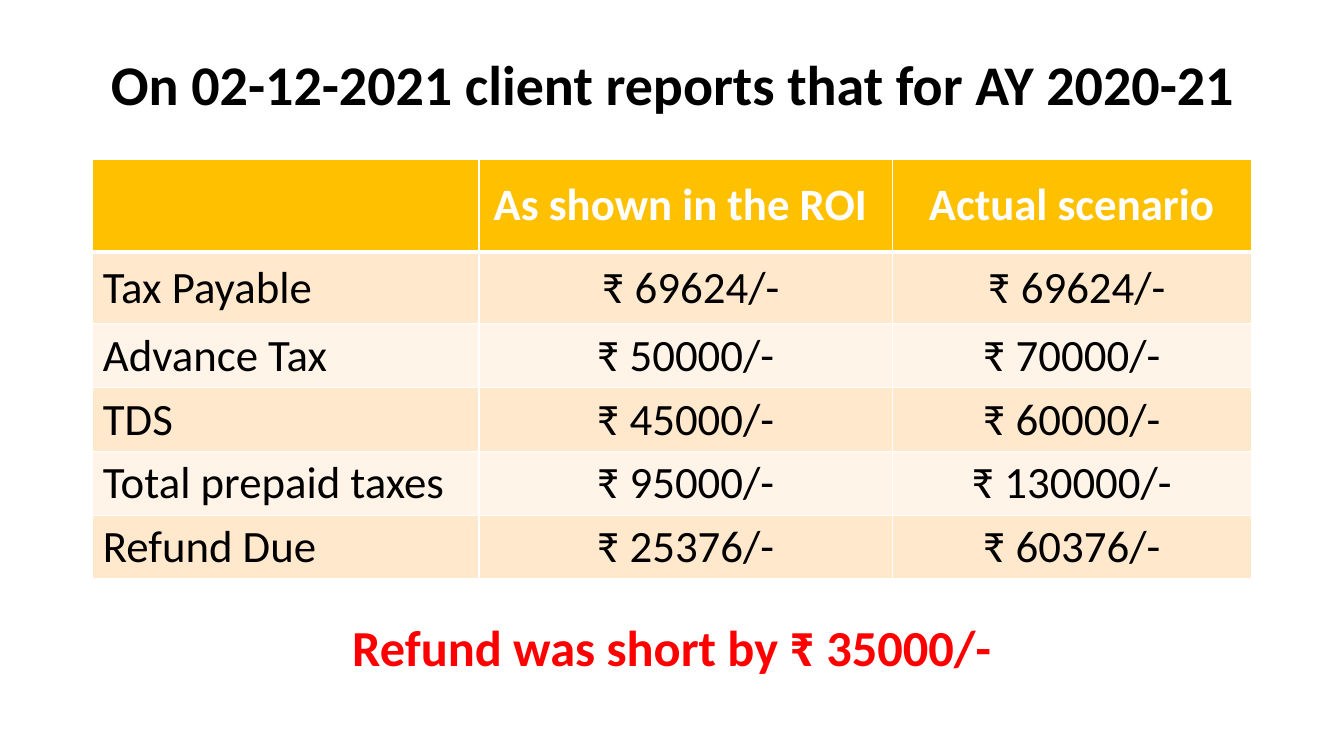
from lxml import etree
from pptx import Presentation
from pptx.dml.color import RGBColor
from pptx.enum import text
from pptx.oxml import ns
from pptx.util import Inches, Pt

BLACK = RGBColor(0x00, 0x00, 0x00)
WHITE = RGBColor(0xFF, 0xFF, 0xFF)
RED = RGBColor(0xFF, 0x00, 0x00)
AMBER = RGBColor(0xFF, 0xC0, 0x00)
PEACH = RGBColor(0xFF, 0xE8, 0xCC)
CREAM = RGBColor(0xFF, 0xF4, 0xE7)

COL_WIDTHS = [3.83, 4.1, 3.56]
ROW_HEIGHTS = [0.92, 0.71, 0.63, 0.63, 0.63, 0.63]
ROWS = [
    ("", "As shown in the ROI ", "Actual scenario"),
    ("Tax Payable", " ₹ 69624/-", " ₹ 69624/-"),
    ("Advance Tax", "₹ 50000/-", "₹ 70000/-"),
    ("TDS", "₹ 45000/-", "₹ 60000/-"),
    ("Total prepaid taxes", "₹ 95000/-", "₹ 130000/-"),
    ("Refund Due", "₹ 25376/-", "₹ 60376/-"),
]


def write(tf, words, size=32, color=BLACK, bold=False, centred=True, spacing=None):
    p = tf.paragraphs[0]
    p.alignment = text.PP_ALIGN.CENTER if centred else text.PP_ALIGN.LEFT
    p.line_spacing = spacing
    r = p.add_run()
    r.text = words
    r.font.name = "Calibri"
    r.font.size = Pt(size)
    r.font.bold = bold
    r.font.color.rgb = color


def add_text(s, box, words, anchor=text.MSO_ANCHOR.TOP, **fmt):
    tf = s.shapes.add_textbox(*map(Inches, box)).text_frame
    tf.word_wrap = True
    tf.vertical_anchor = anchor
    write(tf, words, **fmt)


def set_borders(cell, widths):
    tcPr = cell._tc.get_or_add_tcPr()
    for i, (side, width) in enumerate(widths.items()):
        ln = etree.Element(ns.qn(f"a:ln{side}"), w=str(Pt(width)))
        fill = etree.SubElement(ln, ns.qn("a:solidFill"))
        etree.SubElement(fill, ns.qn("a:srgbClr"), val=str(WHITE))
        tcPr.insert(i, ln)


def add_tax_table(s, left, top):
    size = sum(COL_WIDTHS), sum(ROW_HEIGHTS)
    frame = s.shapes.add_table(len(ROWS), len(COL_WIDTHS), *map(Inches, (left, top, *size)))
    table = frame.table
    for col, width in zip(table.columns, COL_WIDTHS):
        col.width = Inches(width)
    for i, (row, height) in enumerate(zip(table.rows, ROW_HEIGHTS)):
        row.height = Inches(height)
        header = i == 0
        for j, (cell, words) in enumerate(zip(row.cells, ROWS[i])):
            cell.vertical_anchor = text.MSO_ANCHOR.MIDDLE
            cell.fill.solid()
            cell.fill.fore_color.rgb = AMBER if header else PEACH if i % 2 else CREAM
            set_borders(cell, {"L": 1, "R": 1, "T": 3 if i == 1 else 1, "B": 3 if header else 1})
            if words:
                write(cell.text_frame, words, color=WHITE if header else BLACK,
                      bold=header, centred=j > 0)


def main():
    prs = Presentation()
    prs.slide_width, prs.slide_height = Inches(13.33), Inches(7.5)
    s = prs.slides.add_slide(prs.slide_layouts[6])
    add_text(s, (0.92, 0.3, 11.5, 1.14), "On 02-12-2021 client reports that for AY 2020-21",
             anchor=text.MSO_ANCHOR.MIDDLE, size=40, bold=True, spacing=0.9)
    add_text(s, (0, 6.06, 13.33, 0.71), "Refund was short by ₹ 35000/-",
             size=36, color=RED, bold=True)
    add_tax_table(s, 0.92, 1.58)
    prs.save("out.pptx")


if __name__ == "__main__":
    main()
